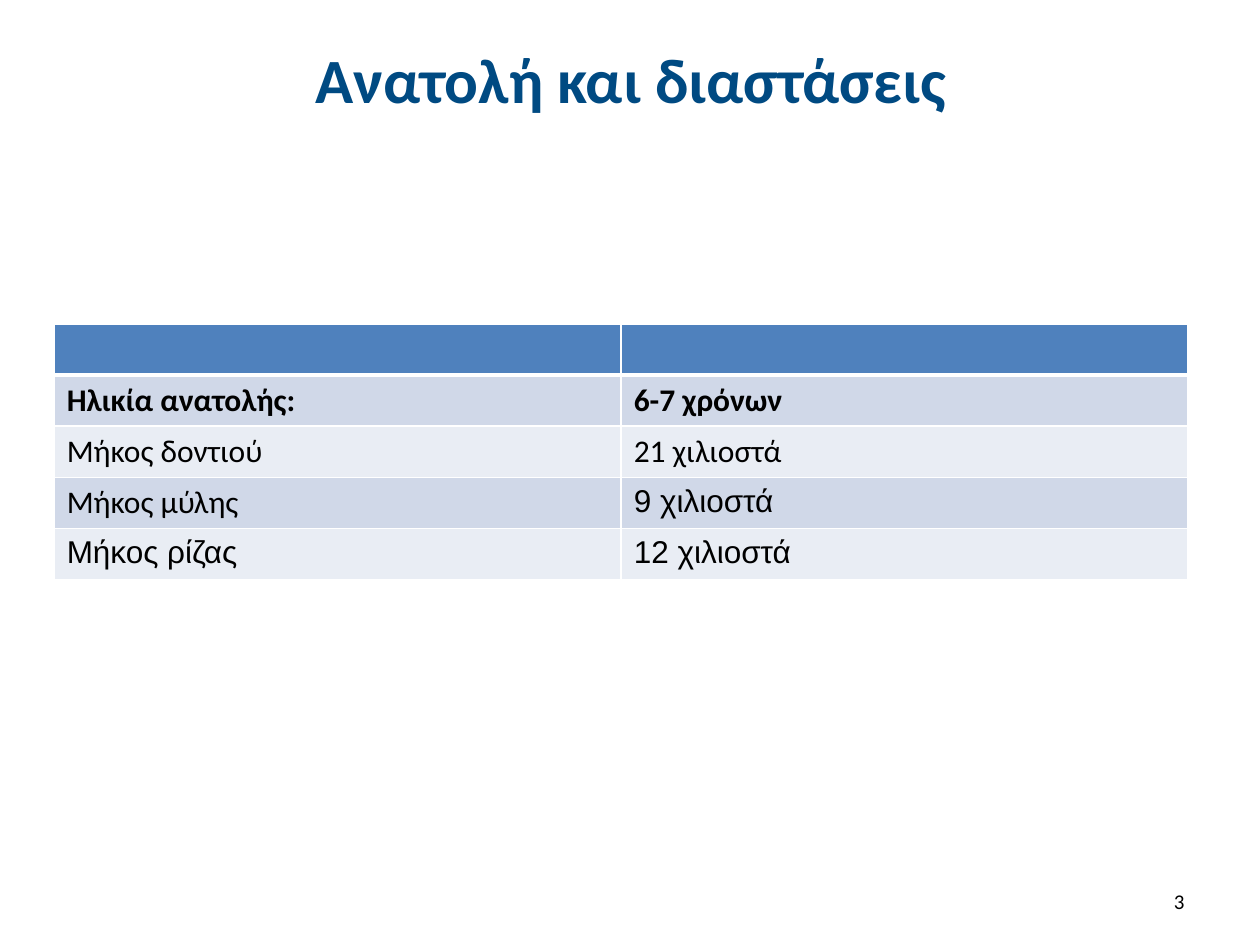
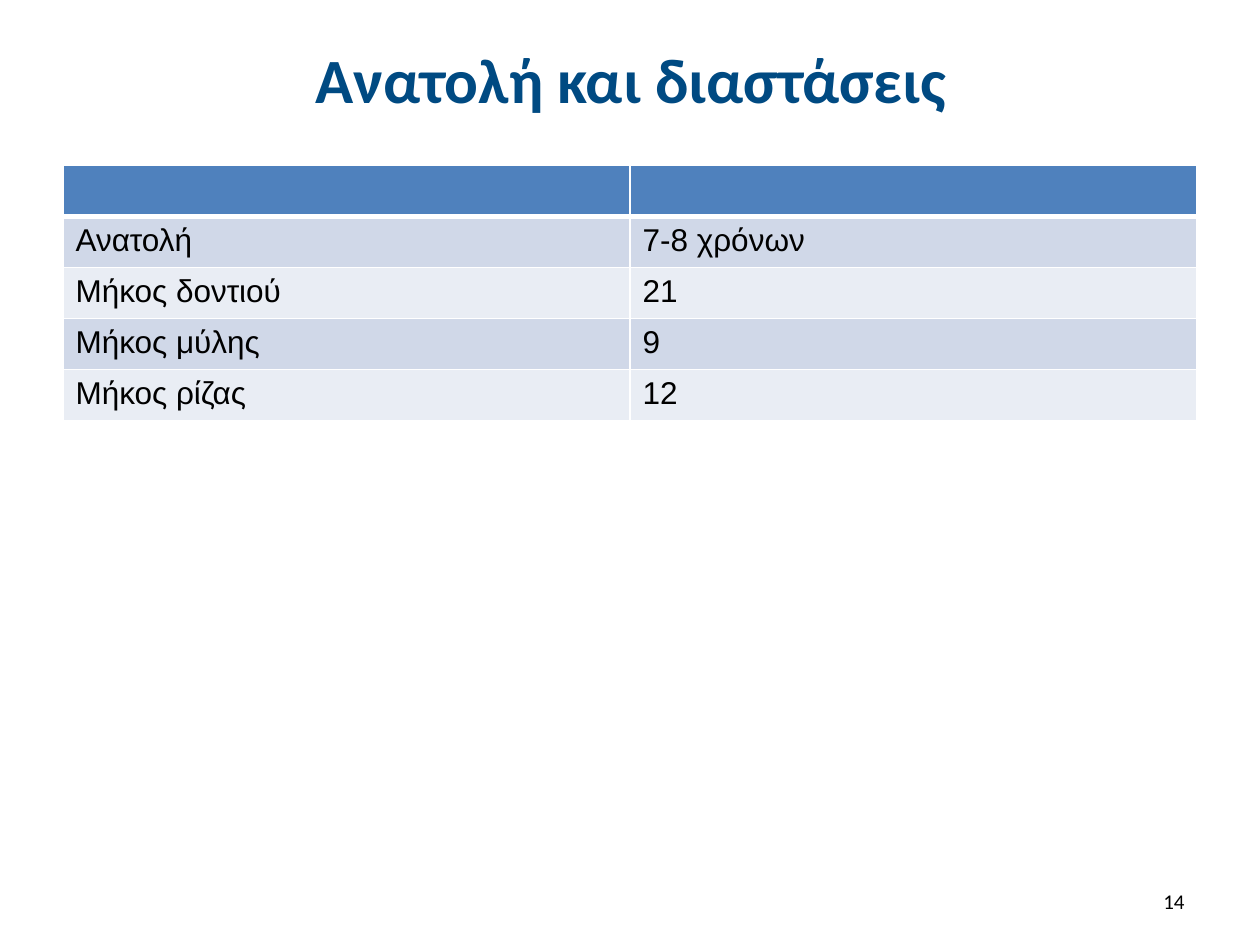
from dataclasses import dataclass

from lxml import etree
from pptx import Presentation
from pptx.dml.color import RGBColor
from pptx.enum.text import MSO_ANCHOR, PP_ALIGN
from pptx.oxml.ns import qn
from pptx.util import Inches, Pt

MIDDLE = MSO_ANCHOR.MIDDLE
CENTER, RIGHT = PP_ALIGN.CENTER, PP_ALIGN.RIGHT
TITLE_ONLY = 5

COLORS = {
    "title": "004A82",
    "text": "000000",
    "header": "4F81BD",
    "band_dark": "D0D8E8",
    "band_light": "E9EDF4",
    "border": "FFFFFF",
}

TITLE_FONT = {"name": "Calibri", "size": Pt(36), "bold": True}
NUMBER_FONT = {"name": "Calibri", "size": Pt(12), "bold": False}
CALIBRI = {"name": "Calibri", "size": Pt(18), "bold": False}
CALIBRI_BOLD = {**CALIBRI, "bold": True}
ARIAL = {**CALIBRI, "name": "Arial"}

TITLE = "Ανατολή και διαστάσεις"
TABLE_WIDTH, TABLE_HEIGHT = Inches(9), Inches(2.03)
THIN, THICK = Pt(1), Pt(3)


@dataclass
class Cell:
    text: str
    font: dict


@dataclass
class ToothSlide:
    number: int
    left: float
    top: float
    rows: list[tuple[Cell, Cell]]


SLIDES = [
    ToothSlide(3, 0.43, 2.57, [
        (Cell("Ηλικία ανατολής:", CALIBRI_BOLD), Cell("6-7 χρόνων", CALIBRI_BOLD)),
        (Cell("Μήκος δοντιού", CALIBRI), Cell("21 χιλιοστά", CALIBRI)),
        (Cell("Μήκος μύλης", CALIBRI), Cell("9 χιλιοστά", ARIAL)),
        (Cell("Μήκος ρίζας", ARIAL), Cell("12 χιλιοστά", ARIAL)),
    ]),
    ToothSlide(14, 0.5, 1.31, [
        (Cell("Ανατολή", ARIAL), Cell("7-8 χρόνων", ARIAL)),
        (Cell("Μήκος δοντιού", ARIAL), Cell("21", ARIAL)),
        (Cell("Μήκος μύλης", ARIAL), Cell("9", ARIAL)),
        (Cell("Μήκος ρίζας", ARIAL), Cell("12", ARIAL)),
    ]),
]


def write(tf, text: str, font: dict, color: str = "text", align=None) -> None:
    p = tf.paragraphs[0]
    p.alignment = align
    r = p.add_run()
    r.text = text
    for attr, value in font.items():
        setattr(r.font, attr, value)
    r.font.color.rgb = RGBColor.from_string(COLORS[color])


def set_borders(cell, top: int, bottom: int) -> None:
    """Draw all four cell edges; line elements must precede the fill."""
    tc_pr = cell._tc.get_or_add_tcPr()
    widths = {"a:lnL": THIN, "a:lnR": THIN, "a:lnT": top, "a:lnB": bottom}
    for i, (tag, width) in enumerate(widths.items()):
        ln = etree.Element(qn(tag), w=str(int(width)))
        fill = etree.SubElement(ln, qn("a:solidFill"))
        etree.SubElement(fill, qn("a:srgbClr"), val=COLORS["border"])
        tc_pr.insert(i, ln)


def add_title(slide) -> None:
    sp = slide.shapes.title
    sp.left, sp.top = Inches(0.51), Inches(0.13)
    sp.width, sp.height = Inches(9), Inches(0.99)
    sp.text_frame.vertical_anchor = MIDDLE
    write(sp.text_frame, TITLE, TITLE_FONT, "title", CENTER)


def add_number(slide, number: int) -> None:
    sp = slide.shapes.add_textbox(Inches(7.17), Inches(6.95), Inches(2.33), Inches(0.4))
    tf = sp.text_frame
    tf.word_wrap = True
    tf.vertical_anchor = MIDDLE
    write(tf, str(number), NUMBER_FONT, align=RIGHT)


def add_dimensions(slide, data: ToothSlide) -> None:
    """Add the table: a blank header row above banded rows."""
    n_rows = len(data.rows) + 1
    table = slide.shapes.add_table(
        n_rows, 2, Inches(data.left), Inches(data.top), TABLE_WIDTH, TABLE_HEIGHT
    ).table
    for i in range(n_rows):
        band = "header" if i == 0 else "band_dark" if i % 2 else "band_light"
        for j in range(2):
            cell = table.cell(i, j)
            cell.fill.solid()
            cell.fill.fore_color.rgb = RGBColor.from_string(COLORS[band])
            set_borders(cell, THICK if i == 1 else THIN, THICK if i == 0 else THIN)
            if i > 0:
                item = data.rows[i - 1][j]
                write(cell.text_frame, item.text, item.font)


def main() -> None:
    prs = Presentation()
    prs.slide_width, prs.slide_height = Inches(10), Inches(7.5)
    for data in SLIDES:
        slide = prs.slides.add_slide(prs.slide_layouts[TITLE_ONLY])
        add_title(slide)
        add_dimensions(slide, data)
        add_number(slide, data.number)
    prs.save("out.pptx")


if __name__ == "__main__":
    main()
